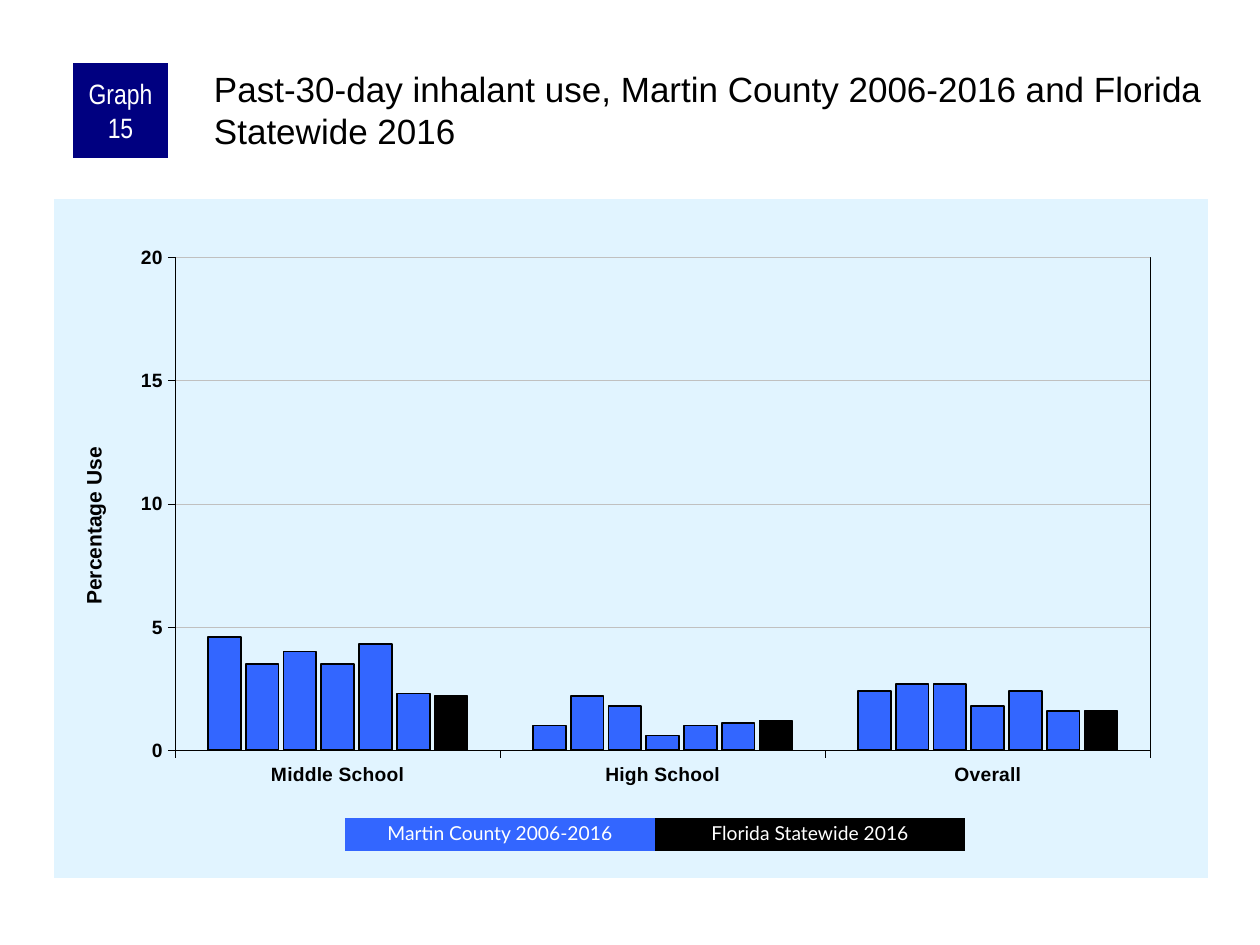
"""Build the Graph 15 slide: past-30-day inhalant use by school level."""
import lxml.etree
import pptx
import pptx.chart.data
import pptx.dml.color
import pptx.enum.chart
import pptx.enum.shapes
import pptx.enum.text
import pptx.oxml
import pptx.oxml.ns
import pptx.util

PX = 914400 // 126
COLORS = {"navy": "000080", "blue": "3366FF", "black": "000000",
          "white": "FFFFFF", "panel": "E1F4FF", "grid": "C0C0C0"}

HEADING = "Past-30-day inhalant use, Martin County 2006-2016 and Florida Statewide 2016"
BADGE = "Graph 15"
AXIS_TITLE = "Percentage Use"
LEVELS = ["Middle School", "High School", "Overall"]
USE = [
    ("Series 1", (4.6, 1, 2.4), "blue"),
    ("Series 2", (3.5, 2.2, 2.7), "blue"),
    ("Series 3", (4, 1.8, 2.7), "blue"),
    ("Series 4", (3.5, 0.6, 1.8), "blue"),
    ("Series 5", (4.3, 1, 2.4), "blue"),
    ("Series 6", (2.3, 1.1, 1.6), "blue"),
    ("Series 7", (2.2, 1.2, 1.6), "black"),
]
KEYS = [("Martin County 2006-2016", "blue"), ("Florida Statewide 2016", "black")]
KEY_LEFT, KEY_TOP, KEY_WIDTH, KEY_HEIGHT = 345, 818, 310, 33
CHART_BOX = (54, 199, 1154, 679)
PLOT_LAYOUT = {"x": 0.105, "y": 0.086, "w": 0.845, "h": 0.726}
TITLE_LAYOUT = {"x": 0.02, "y": 0.36}


def rgb(name):
    return pptx.dml.color.RGBColor.from_string(COLORS[name])


def emu(*lengths):
    return [length * PX for length in lengths]


def style_font(font, size, color, face="Arial", bold=False):
    font.size, font.name, font.bold = pptx.util.Pt(size), face, bold
    font.color.rgb = rgb(color)


def style_line(line, color, width):
    line.color.rgb = rgb(color)
    line.width = pptx.util.Pt(width)


def write(frame, text, size, color, face, margins, align):
    frame.text = text
    frame.word_wrap = True
    (frame.margin_left, frame.margin_top,
     frame.margin_right, frame.margin_bottom) = emu(*margins)
    paragraph = frame.paragraphs[0]
    paragraph.alignment = align
    style_font(paragraph.runs[0].font, size, color, face)
    return paragraph


def add_block(slide, box, fill, text, size, face, margins):
    block = slide.shapes.add_shape(pptx.enum.shapes.MSO_SHAPE.RECTANGLE, *emu(*box))
    block.shadow.inherit = False
    block.fill.solid()
    block.fill.fore_color.rgb = rgb(fill)
    block.line.fill.background()
    block.text_frame.vertical_anchor = pptx.enum.text.MSO_ANCHOR.MIDDLE
    return write(block.text_frame, text, size, "white", face, margins,
                 pptx.enum.text.PP_ALIGN.CENTER)


def set_layout(parent, index, fractions, inner=False):
    qn = pptx.oxml.ns.qn
    for old in parent.findall(qn("c:layout")):
        parent.remove(old)
    layout = parent.makeelement(qn("c:layout"), {})
    parent.insert(index, layout)
    manual = lxml.etree.SubElement(layout, qn("c:manualLayout"))
    settings = [("layoutTarget", "inner")] if inner else []
    settings += [("xMode", "edge"), ("yMode", "edge"), *fractions.items()]
    for tag, value in settings:
        lxml.etree.SubElement(manual, qn("c:" + tag)).set("val", str(value))


def area_format(fill, line):
    return pptx.oxml.parse_xml(
        f'<c:spPr {pptx.oxml.ns.nsdecls("c", "a")}>{fill}<a:ln w="3175">{line}</a:ln></c:spPr>')


def solid(name):
    return f'<a:solidFill><a:srgbClr val="{COLORS[name]}"/></a:solidFill>'


def add_use_chart(slide):
    data = pptx.chart.data.CategoryChartData()
    data.categories = LEVELS
    for name, values, _ in USE:
        data.add_series(name, values)
    chart = slide.shapes.add_chart(
        pptx.enum.chart.XL_CHART_TYPE.COLUMN_CLUSTERED, *emu(*CHART_BOX), data).chart
    chart.has_legend = chart.has_title = False
    style_font(chart.font, 8, "black")

    bars = chart.plots[0]
    bars.vary_by_categories = False
    bars.gap_width, bars.overlap = 200, -15
    for series, (_, _, color) in zip(bars.series, USE):
        series.format.fill.solid()
        series.format.fill.fore_color.rgb = rgb(color)
        style_line(series.format.line, "black", 1)

    levels, percent = chart.category_axis, chart.value_axis
    for axis in (levels, percent):
        style_font(axis.tick_labels.font, 11, "black", bold=True)
        style_line(axis.format.line, "black", 0.25)
        axis.major_tick_mark = pptx.enum.chart.XL_TICK_MARK.OUTSIDE
    percent.minimum_scale, percent.maximum_scale, percent.major_unit = 0, 20, 5
    percent.tick_labels.number_format = "0"
    percent.tick_labels.number_format_is_linked = False
    percent.has_major_gridlines = True
    style_line(percent.major_gridlines.format.line, "grid", 0.25)
    title = percent.axis_title
    title.text_frame.text = AXIS_TITLE
    style_font(title.text_frame.paragraphs[0].runs[0].font, 12, "black", bold=True)
    title.text_frame._txBody.bodyPr.set("rot", "-5400000")
    title.text_frame._txBody.bodyPr.set("vert", "horz")
    set_layout(title._element, 1, TITLE_LAYOUT)

    space = chart._chartSpace
    plot_area = space.chart.plotArea
    set_layout(plot_area, 0, PLOT_LAYOUT, inner=True)
    plot_area.append(area_format("<a:noFill/>", solid("black")))
    space.chart.addnext(area_format(solid("panel"), "<a:noFill/>"))


def main():
    deck = pptx.Presentation()
    deck.slide_width, deck.slide_height = emu(1260, 945)
    slide = deck.slides.add_slide(deck.slide_layouts[6])

    add_use_chart(slide)
    add_block(slide, (73, 63, 95, 95), "navy", BADGE, 16, "Arial Narrow", (6, 0, 6, 0))
    heading = slide.shapes.add_textbox(*emu(210, 63, 998, 105))
    write(heading.text_frame, HEADING, 20, "black", "Arial", (4, 4, 0, 0),
          pptx.enum.text.PP_ALIGN.LEFT)
    for position, (label, color) in enumerate(KEYS):
        box = (KEY_LEFT + position * KEY_WIDTH, KEY_TOP, KEY_WIDTH, KEY_HEIGHT)
        key = add_block(slide, box, color, label, 11, "Lato", (13, 6, 13, 6))
        key.line_spacing = 0.9

    deck.save("out.pptx")


if __name__ == "__main__":
    main()
